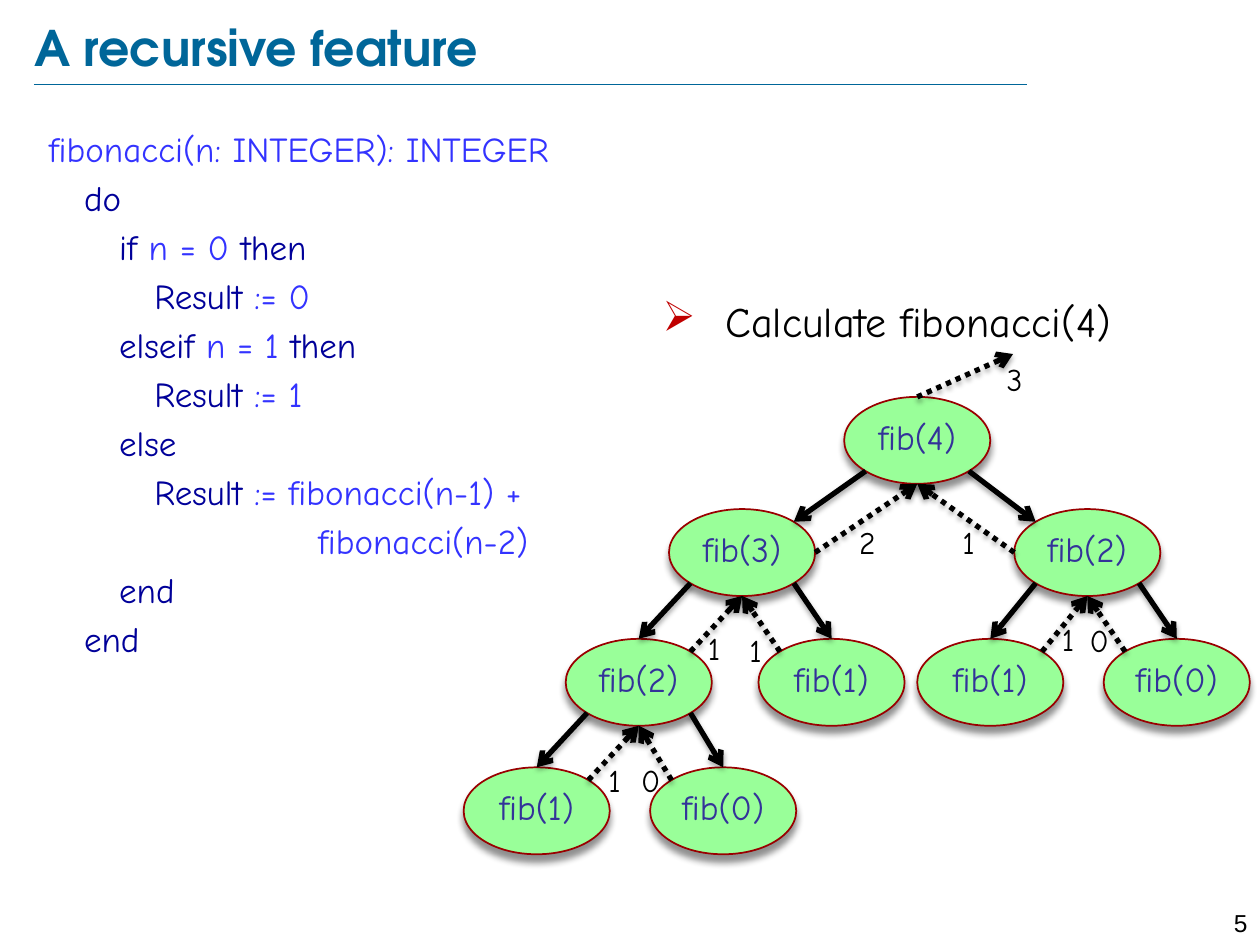
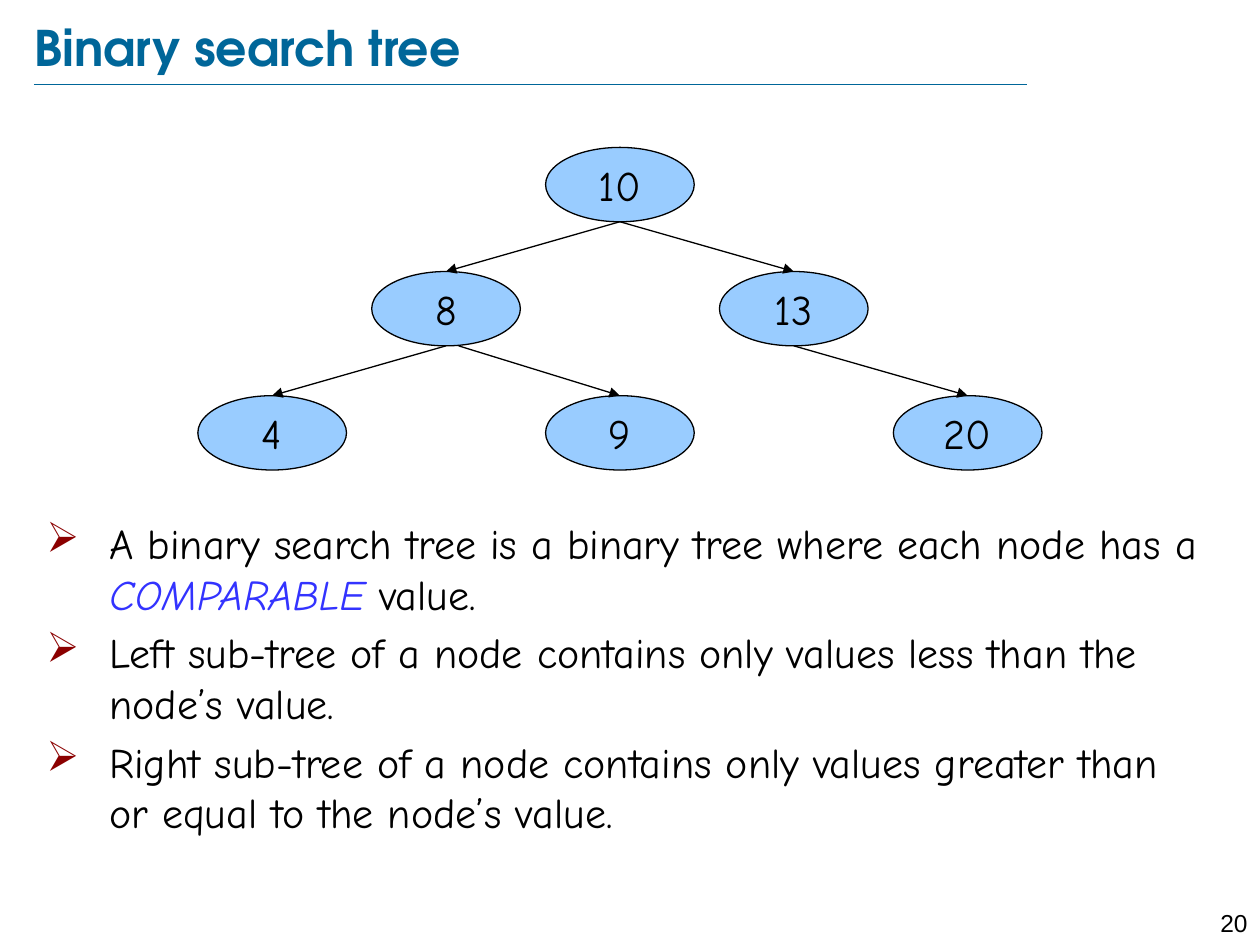
from typing import NamedTuple, Optional

from lxml import etree
from pptx import Presentation
from pptx import util as u
from pptx.dml.color import RGBColor
from pptx.enum import dml, shapes, text
from pptx.oxml.ns import qn
from pptx.util import Inches

TITLE_BLUE = RGBColor(0x00, 0x66, 0x99)
BLACK = RGBColor(0x00, 0x00, 0x00)
CODE = RGBColor(0x33, 0x33, 0xFF)
KEYWORD = RGBColor(0x00, 0x00, 0x99)
CALL_FILL = RGBColor(0x99, 0xFF, 0x99)
CALL_LINE = RGBColor(0x99, 0x00, 0x00)
CALL_TEXT = RGBColor(0x33, 0x33, 0x99)
TREE_FILL = RGBColor(0x99, 0xCC, 0xFF)
BRIGHT_RED = RGBColor(0xC0, 0x00, 0x00)
DARK_RED = RGBColor(0x8B, 0x00, 0x00)

BODY_FONT = "Comic Neue"
DIAGONAL = 0.3536  # share of an ellipse's size from its centre to a diagonal point


class Run(NamedTuple):
    text: str
    color: RGBColor = BLACK
    italic: bool = False


class Box(NamedTuple):
    left: float
    top: float
    width: float
    height: float

    @property
    def middle(self) -> float:
        return self.left + self.width / 2

    @property
    def bottom(self) -> float:
        return self.top + self.height

    def diagonal(self, side: int, down: int) -> tuple[float, float]:
        """Point of the ellipse at 45 degrees; side and down are -1 or 1."""
        return (self.middle + side * DIAGONAL * self.width,
                self.top + self.height / 2 + down * DIAGONAL * self.height)


class Shadow(NamedTuple):
    blur: float
    distance: float
    alpha: int


class NodeStyle(NamedTuple):
    fill: RGBColor
    line: RGBColor
    line_width: float
    format: dict
    line_spacing: float = 1.0
    shadow: Optional[Shadow] = None


class ArrowStyle(NamedTuple):
    width: float
    head: Optional[str] = None
    dotted: bool = False
    color: RGBColor = BLACK
    shadow: Optional[Shadow] = None


class Call(NamedTuple):
    label: str
    left: float
    level: int
    parent: Optional[int]
    result: str
    result_left: float
    result_top: float


class TreeNode(NamedTuple):
    value: str
    column: int
    row: int
    parent: Optional[int] = None
    start_shift: float = 0


ARROW_SHADOW = Shadow(3.1, 1.8, 35)
CALL_ARROW = ArrowStyle(3, "arrow", shadow=ARROW_SHADOW)
RETURN_ARROW = CALL_ARROW._replace(dotted=True)
TREE_ARROW = ArrowStyle(0.75, "triangle")
TITLE_RULE = ArrowStyle(0.25, color=TITLE_BLUE)
CALL_STYLE = NodeStyle(CALL_FILL, CALL_LINE, 1, {"name": BODY_FONT, "size": u.Pt(20)},
                       0.8, Shadow(4, 4, 43))
TREE_STYLE = NodeStyle(TREE_FILL, BLACK, 0.75, {"name": BODY_FONT, "size": u.Pt(24)})

CODE_LINES = [
    [Run("fibonacci(n: INTEGER): INTEGER", CODE)],
    [Run("   do", KEYWORD)],
    [Run("      if ", KEYWORD), Run("n = 0 ", CODE), Run("then", KEYWORD)],
    [Run("         Result ", KEYWORD), Run(":= 0", CODE)],
    [Run("      elseif ", KEYWORD), Run("n = 1 ", CODE), Run("then", KEYWORD)],
    [Run("         Result ", KEYWORD), Run(":= 1", CODE)],
    [Run("      else", KEYWORD)],
    [Run("         Result ", KEYWORD), Run(":= fibonacci(n-1) +", CODE)],
    [Run("                       fibonacci(n-2)", CODE)],
    [Run("      end", KEYWORD)],
    [Run("   end", KEYWORD)],
]
LEVEL_TOPS = (3.15, 4.04, 5.07, 6.09)
CALLS = [
    Call("fib(4)", 6.7, 0, None, "3", 7.89, 2.81),
    Call("fib(3)", 5.31, 1, 0, "2", 6.72, 4.1),
    Call("fib(2)", 8.05, 1, 0, "1", 7.54, 4.1),
    Call("fib(1)", 7.28, 2, 2, "1", 8.33, 4.87),
    Call("fib(0)", 8.76, 2, 2, "0", 8.55, 4.88),
    Call("fib(2)", 4.49, 2, 1, "1", 5.52, 4.94),
    Call("fib(1)", 6.02, 2, 1, "1", 5.85, 4.96),
    Call("fib(1)", 3.68, 3, 5, "1", 4.73, 5.99),
    Call("fib(0)", 5.16, 3, 5, "0", 4.99, 5.99),
]
TREE = [
    TreeNode("10", 2, 0),
    TreeNode("8", 1, 1, 0),
    TreeNode("13", 3, 1, 0),
    TreeNode("4", 0, 2, 1),
    TreeNode("9", 2, 2, 1, start_shift=0.1),
    TreeNode("20", 4, 2, 2),
]
TREE_RULES = [
    [Run("A binary search tree is a binary tree where each node has a "),
     Run("COMPARABLE", CODE, italic=True), Run(" value.")],
    [Run("Left sub-tree of a node contains only values less than the node’s value.")],
    [Run("Right sub-tree of a node contains only values greater than "
         "or equal to the node’s value.")],
]


def set_attributes(target, values: dict) -> None:
    for name, value in values.items():
        setattr(target, name, value)


def add_runs(paragraph, runs: list[Run], font_format: dict) -> None:
    for item in runs:
        run = paragraph.add_run()
        run.text = item.text
        set_attributes(run.font, {**font_format, "italic": item.italic})
        run.font.color.rgb = item.color


def add_bullet(paragraph, color: RGBColor) -> None:
    properties = paragraph._p.get_or_add_pPr()
    properties.set("marL", str(Inches(0.5)))
    properties.set("indent", str(Inches(-0.5)))
    bullet_color = etree.SubElement(properties, qn("a:buClr"))
    etree.SubElement(bullet_color, qn("a:srgbClr"), val=str(color))
    etree.SubElement(properties, qn("a:buChar"), char="➢")


def add_text(slide, box: Box, paragraphs: list[list[Run]], size: float,
             font: str = BODY_FONT, bold: bool = False, space: float = 0,
             align=text.PP_ALIGN.LEFT, bullet: Optional[RGBColor] = None):
    frame = slide.shapes.add_textbox(*map(Inches, box)).text_frame
    frame.word_wrap = True
    for index, runs in enumerate(paragraphs):
        paragraph = frame.add_paragraph() if index else frame.paragraphs[0]
        paragraph.alignment = align
        if index:
            paragraph.space_before = u.Pt(space)
        if bullet is not None:
            add_bullet(paragraph, bullet)
        add_runs(paragraph, runs, {"name": font, "size": u.Pt(size), "bold": bold})
    return frame


def add_shadow(effects, shadow: Shadow) -> None:
    outer = etree.SubElement(
        effects, qn("a:outerShdw"), blurRad=str(u.Pt(shadow.blur)),
        dist=str(u.Pt(shadow.distance)), dir="5400000", rotWithShape="0")
    color = etree.SubElement(outer, qn("a:srgbClr"), val=str(BLACK))
    etree.SubElement(color, qn("a:alpha"), val=str(shadow.alpha * 1000))


def add_line(slide, start: tuple[float, float], end: tuple[float, float],
             style: ArrowStyle):
    connector = slide.shapes.add_connector(
        shapes.MSO_CONNECTOR.STRAIGHT, *map(Inches, (*start, *end)))
    line = connector.line
    line.width = u.Pt(style.width)
    line.color.rgb = style.color
    if style.dotted:
        line.dash_style = dml.MSO_LINE.ROUND_DOT
    properties = connector._element.spPr
    if style.head:
        etree.SubElement(properties.find(qn("a:ln")), qn("a:tailEnd"), type=style.head)
    effects = etree.SubElement(properties, qn("a:effectLst"))
    if style.shadow:
        add_shadow(effects, style.shadow)
    return connector


def add_node(slide, box: Box, label: str, style: NodeStyle, color: RGBColor):
    node = slide.shapes.add_shape(shapes.MSO_SHAPE.OVAL, *map(Inches, box))
    node.shadow.inherit = False
    if style.shadow:
        add_shadow(node._element.spPr.find(qn("a:effectLst")), style.shadow)
    node.fill.solid()
    node.fill.fore_color.rgb = style.fill
    node.line.color.rgb = style.line
    node.line.width = u.Pt(style.line_width)
    set_attributes(node.text_frame, {
        "margin_left": 0, "margin_right": 0, "word_wrap": False,
        "vertical_anchor": text.MSO_ANCHOR.MIDDLE})
    paragraph = node.text_frame.paragraphs[0]
    set_attributes(paragraph, {"alignment": text.PP_ALIGN.CENTER,
                               "line_spacing": style.line_spacing})
    add_runs(paragraph, [Run(label, color)], style.format)
    return node


def add_base_slide(presentation, title: str, number: int):
    """Blank slide with the title, the rule below it and the page number."""
    slide = presentation.slides.add_slide(presentation.slide_layouts[6])
    add_line(slide, (0.27, 0.67), (8.15, 0.67), TITLE_RULE)
    add_text(slide, Box(9.2, 7.16, 0.8, 0.24), [[Run(str(number))]], 14, "Arial",
             align=text.PP_ALIGN.RIGHT)
    frame = add_text(slide, Box(0.27, 0.13, 8.69, 0.48), [[Run(title, TITLE_BLUE)]],
                     28, "TeX Gyre Adventor", bold=True)
    set_attributes(frame, {
        "margin_left": 0, "margin_right": 0, "margin_top": 0, "margin_bottom": 0,
        "vertical_anchor": text.MSO_ANCHOR.MIDDLE})
    return slide


def draw_call_tree(slide) -> None:
    boxes = [Box(call.left, LEVEL_TOPS[call.level], 1.16, 0.69) for call in CALLS]
    nodes = [add_node(slide, box, call.label, CALL_STYLE, CALL_TEXT)
             for call, box in zip(CALLS, boxes)]
    for call, box, node in zip(CALLS, boxes, nodes):
        if call.parent is None:
            add_line(slide, (box.middle, box.top), (8.04, 2.81), RETURN_ARROW)
        else:
            parent = boxes[call.parent]
            side = -1 if box.middle < parent.middle else 1
            inner = box.diagonal(-side, -1)
            beside = (box.middle - side * box.width / 2, box.top + box.height / 2)
            first_level = call.level == 1
            arrow = add_line(slide, parent.diagonal(side, 1),
                             inner if first_level else (box.middle, box.top), CALL_ARROW)
            if not first_level:
                arrow.end_connect(node, 0)
            add_line(slide, beside if first_level else inner,
                     (parent.middle, parent.bottom), RETURN_ARROW)
        add_text(slide, Box(call.result_left, call.result_top, 0.3, 0.4),
                 [[Run(call.result)]], 18)


def draw_search_tree(slide) -> None:
    boxes = [Box(1.57 + 1.38 * node.column, 1.17 + 0.985 * node.row, 1.18, 0.59)
             for node in TREE]
    ovals = [add_node(slide, box, node.value, TREE_STYLE, BLACK)
             for node, box in zip(TREE, boxes)]
    for node, box, oval in zip(TREE, boxes, ovals):
        if node.parent is not None:
            parent = boxes[node.parent]
            arrow = add_line(slide, (parent.middle + node.start_shift, parent.bottom),
                             (box.middle, box.top), TREE_ARROW)
            arrow.end_connect(oval, 0)


def main() -> None:
    presentation = Presentation()
    presentation.slide_width, presentation.slide_height = Inches(10), Inches(7.5)

    slide = add_base_slide(presentation, "A recursive feature", 5)
    add_text(slide, Box(0.29, 0.96, 9.38, 6.17), CODE_LINES, 20, space=4)
    add_text(slide, Box(5.16, 2.3, 4.29, 0.5), [[Run("Calculate fibonacci(4)")]], 24,
             bullet=BRIGHT_RED)
    draw_call_tree(slide)

    slide = add_base_slide(presentation, "Binary search tree", 20)
    draw_search_tree(slide)
    add_text(slide, Box(0.27, 4.06, 9.4, 2.88), TREE_RULES, 24, space=4.8,
             bullet=DARK_RED)

    presentation.save("out.pptx")


if __name__ == "__main__":
    main()
